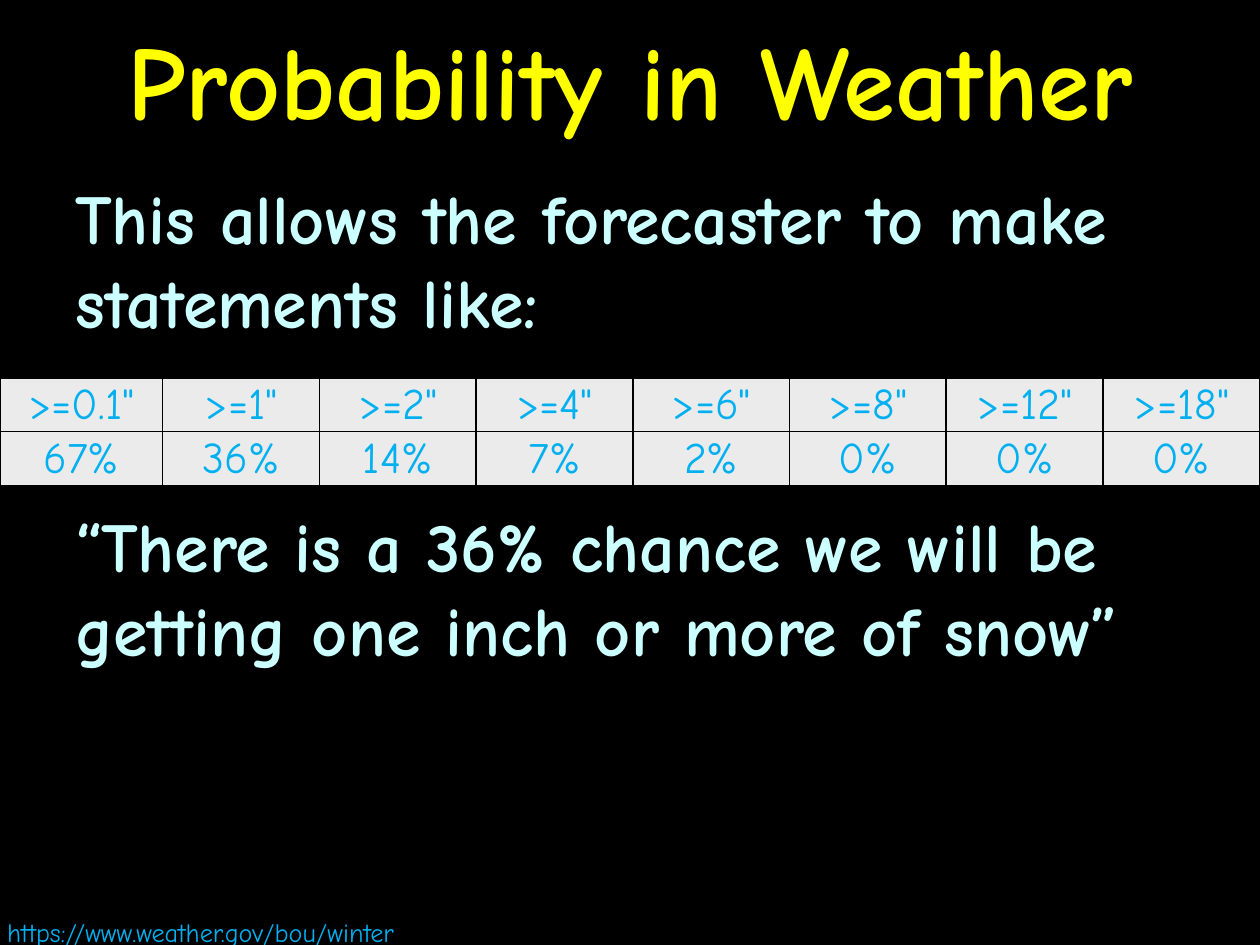
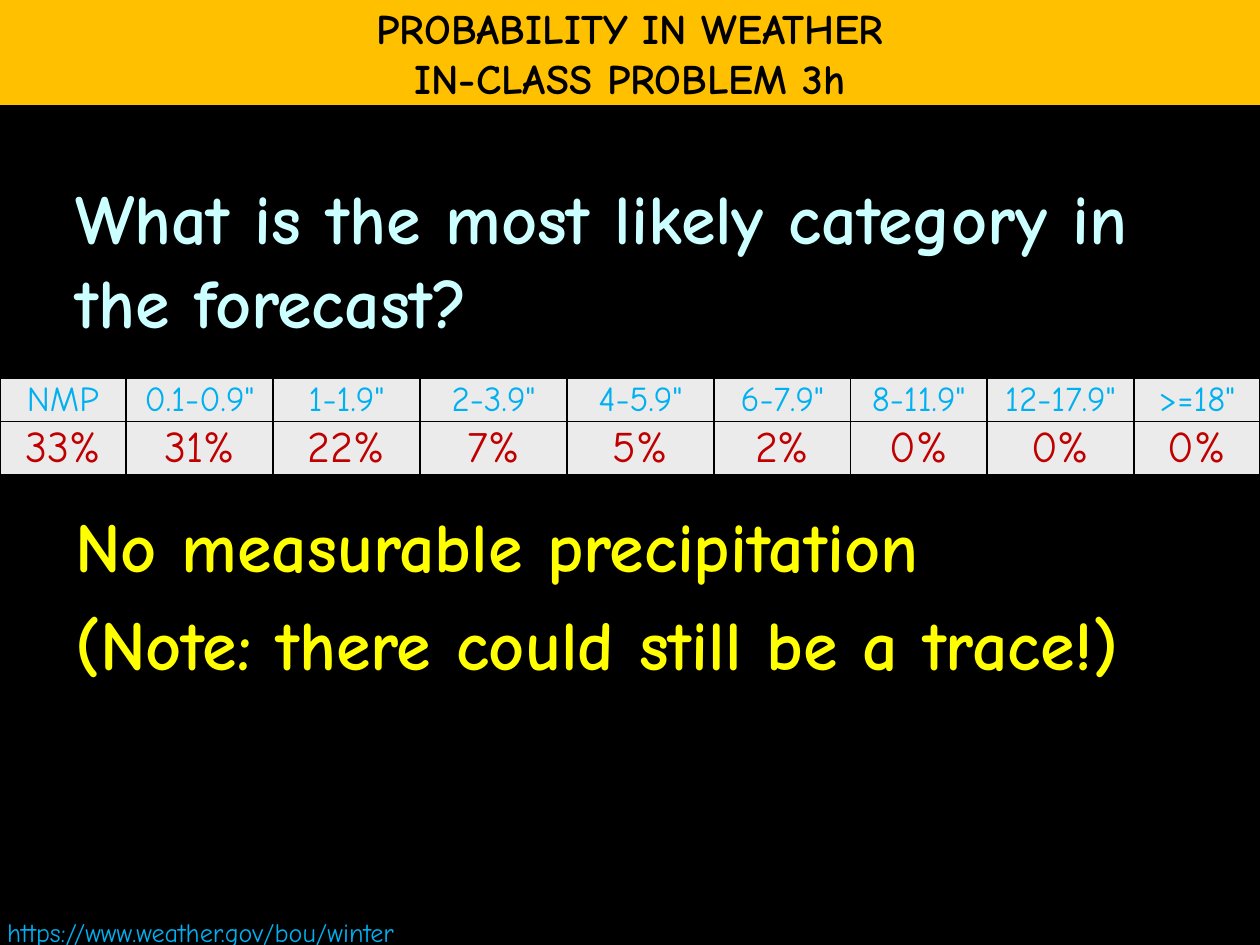
import pptx
import pptx.util
from lxml import etree
from pptx.dml.color import RGBColor
from pptx.enum.shapes import MSO_SHAPE
from pptx.enum.text import MSO_ANCHOR, PP_ALIGN
from pptx.oxml.ns import qn

Pt = pptx.util.Pt

FONT = "Comic Neue"
BLACK = RGBColor(0x00, 0x00, 0x00)
YELLOW = RGBColor(0xFF, 0xFF, 0x00)
PALE_CYAN = RGBColor(0xCC, 0xFF, 0xFF)
BLUE = RGBColor(0x00, 0xB0, 0xF0)
RED = RGBColor(0xC0, 0x00, 0x00)
GOLD = RGBColor(0xFF, 0xC0, 0x00)
CELL_GRAY = RGBColor(0xEB, 0xEB, 0xEB)

# Boxes shared by the slides: left, top, width, height
SLIDE_W, SLIDE_H = 720, 540
TITLE_BOX = (0, 0, SLIDE_W, 90)
BAND_BOX = (0, 0, SLIDE_W, 60)
LEAD_BOX = (36, 96, 648, 104)
ANSWER_BOX = (36, 283.5, 648, 112)
SOURCE_BOX = (-3, 520, 361, 25)
TABLE_TOP = 216


def write(tf, lines, size, color, bold=False, align=PP_ALIGN.LEFT, gap=0):
    """Fill a text frame with one paragraph per line."""
    for i, line in enumerate(lines):
        p = tf.paragraphs[0] if i == 0 else tf.add_paragraph()
        p.text = line
        p.alignment = align
        if i:
            p.space_before = Pt(gap)
        p.font.name = FONT
        p.font.size = Pt(size)
        p.font.bold = bold
        p.font.color.rgb = color


def add_text(slide, box, lines, size, color, anchor=MSO_ANCHOR.TOP, **style):
    tf = slide.shapes.add_textbox(*map(Pt, box)).text_frame
    tf.word_wrap = True
    tf.vertical_anchor = anchor
    write(tf, lines, size, color, **style)


def add_title(slide, text):
    add_text(slide, TITLE_BOX, [text], 60, YELLOW, MSO_ANCHOR.MIDDLE,
             bold=True, align=PP_ALIGN.CENTER)


def add_band(slide, lines):
    sp = slide.shapes.add_shape(MSO_SHAPE.RECTANGLE, *map(Pt, BAND_BOX))
    sp.shadow.inherit = False
    sp.fill.solid()
    sp.fill.fore_color.rgb = GOLD
    sp.line.fill.background()
    tf = sp.text_frame
    tf.word_wrap = False
    tf.vertical_anchor = MSO_ANCHOR.MIDDLE
    write(tf, lines, 24, BLACK, bold=True, align=PP_ALIGN.CENTER)


def add_body(slide, lead, answer, answer_color):
    """Statement above the table and the reading of it below."""
    add_text(slide, LEAD_BOX, [lead], 40, PALE_CYAN, bold=True)
    add_text(slide, ANSWER_BOX, answer, 40, answer_color, bold=True, gap=8)


def add_source(slide):
    add_text(slide, SOURCE_BOX, ["https://www.weather.gov/bou/winter"], 15, BLUE)


def set_borders(cell):
    tc_pr = cell._tc.get_or_add_tcPr()
    for i, side in enumerate(("lnL", "lnR", "lnT", "lnB")):
        ln = etree.Element(qn("a:" + side), w=str(Pt(1)))
        fill = etree.SubElement(ln, qn("a:solidFill"))
        etree.SubElement(fill, qn("a:srgbClr"), val=str(BLACK))
        tc_pr.insert(i, ln)


def add_forecast(slide, widths, rows):
    """Each row is (height, text size, colour, values)."""
    height = sum(row[0] for row in rows)
    frame = slide.shapes.add_table(len(rows), len(widths), Pt(0), Pt(TABLE_TOP),
                                   Pt(SLIDE_W), Pt(height))
    table = frame.table
    for column, width in zip(table.columns, widths):
        column.width = Pt(width)
    for r, (row_height, size, color, values) in enumerate(rows):
        table.rows[r].height = Pt(row_height)
        for c, value in enumerate(values):
            cell = table.cell(r, c)
            cell.margin_left = cell.margin_right = cell.margin_top = Pt(0.7)
            cell.margin_bottom = Pt(0)
            cell.vertical_anchor = MSO_ANCHOR.MIDDLE
            cell.fill.solid()
            cell.fill.fore_color.rgb = CELL_GRAY
            set_borders(cell)
            write(cell.text_frame, [value], size, color, align=PP_ALIGN.CENTER)


def new_slide(prs):
    slide = prs.slides.add_slide(prs.slide_layouts[6])
    slide.background.fill.solid()
    slide.background.fill.fore_color.rgb = BLACK
    return slide


def build_statement_slide(prs):
    slide = new_slide(prs)
    add_title(slide, "Probability in Weather")
    add_body(slide, "This allows the forecaster to make statements like:",
             ["“There is a 36% chance we will be getting one inch or more of snow”"],
             PALE_CYAN)
    add_source(slide)
    first = 93
    amounts = ["0.1", "1", "2", "4", "6", "8", "12", "18"]
    add_forecast(slide, [first] + [(SLIDE_W - first) / 7] * 7, [
        (30.6, 25, BLUE, [f'>={amount}"' for amount in amounts]),
        (30.6, 25, BLUE, [f"{chance}%" for chance in (67, 36, 14, 7, 2, 0, 0, 0)]),
    ])


def build_problem_slide(prs):
    slide = new_slide(prs)
    add_body(slide, "What is the most likely category in the forecast?",
             ["No measurable precipitation", "(Note: there could still be a trace!)"],
             YELLOW)
    add_source(slide)
    categories = ["NMP", '0.1-0.9"', '1-1.9"', '2-3.9"', '4-5.9"', '6-7.9"',
                  '8-11.9"', '12-17.9"', '>=18"']
    add_forecast(slide, [72] + [84] * 4 + [78] * 2 + [84, 72], [
        (24.6, 20, BLUE, categories),
        (30.6, 25, RED, [f"{chance}%" for chance in (33, 31, 22, 7, 5, 2, 0, 0, 0)]),
    ])
    add_band(slide, ["PROBABILITY IN WEATHER", "IN-CLASS PROBLEM 3h"])


def main():
    prs = pptx.Presentation()
    prs.slide_width, prs.slide_height = Pt(SLIDE_W), Pt(SLIDE_H)
    build_statement_slide(prs)
    build_problem_slide(prs)
    prs.save("out.pptx")


if __name__ == "__main__":
    main()
